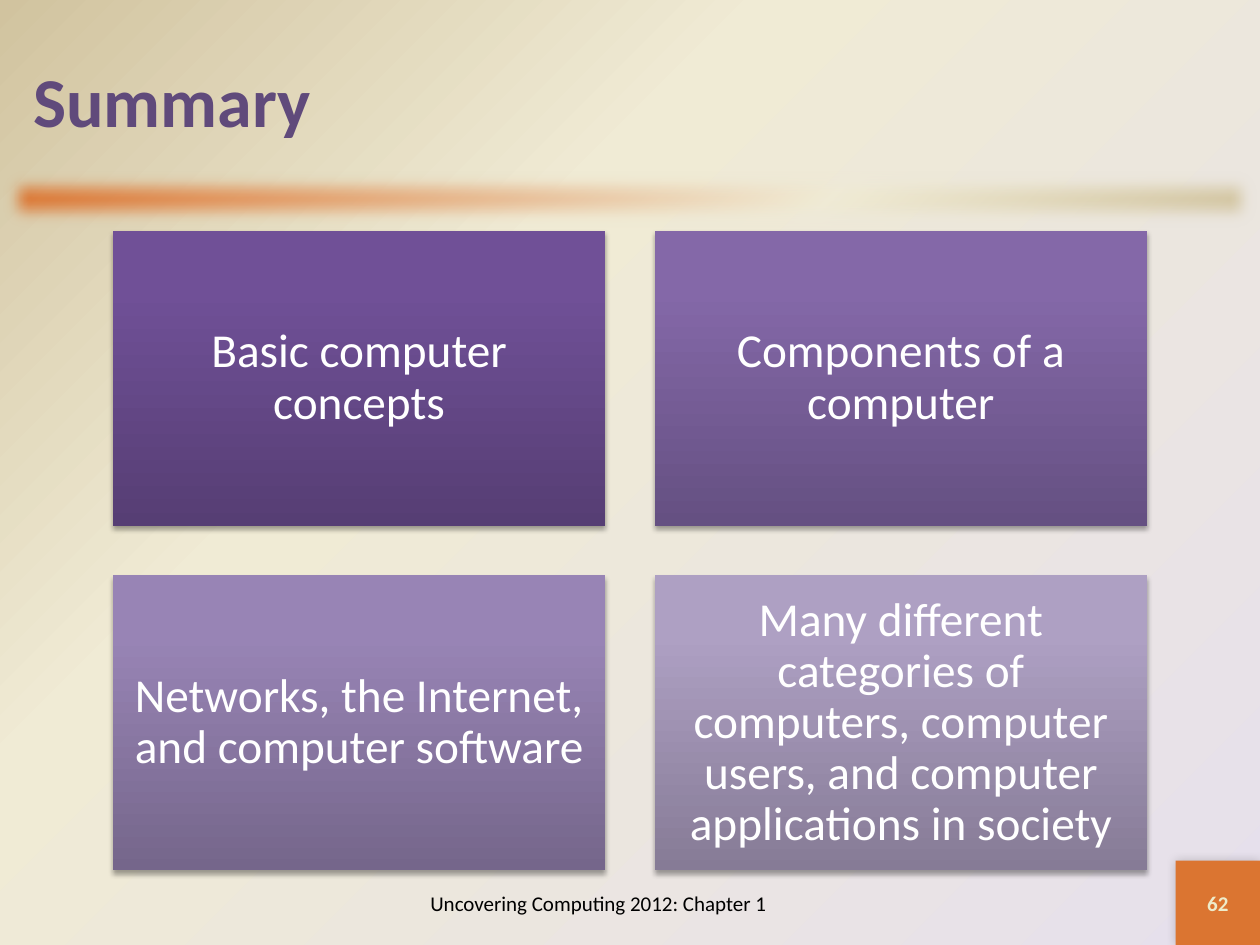
from dataclasses import dataclass

from lxml import etree
from pptx import Presentation
from pptx.dml.color import RGBColor
from pptx.enum.shapes import MSO_SHAPE
from pptx.enum.text import MSO_ANCHOR, PP_ALIGN
from pptx.oxml.ns import qn
from pptx.util import Cm, Pt

RECTANGLE = MSO_SHAPE.RECTANGLE
MIDDLE = MSO_ANCHOR.MIDDLE
LEFT, CENTER = PP_ALIGN.LEFT, PP_ALIGN.CENTER

FONT = "Calibri"
COLORS = {
    "title": "604A7B",
    "accent": "DB7531",
    "cream": "F0EBD5",
    "tan": "D1C39F",
    "lavender": "E6E0EC",
    "number": "EEEBCA",
    "white": "FFFFFF",
    "black": "000000",
}

SLIDE_W, SLIDE_H = 25.4, 19.05
TILE_W, TILE_H, TILE_GAP = 9.92, 5.95, 1.0
TILE_LEFT, TILE_TOP = 2.28, 4.65
COLUMNS = 2
NUMBER_SIZE = 1.7


@dataclass(frozen=True)
class Topic:
    text: str
    bottom: str
    middle: str
    top: str


@dataclass(frozen=True)
class Shadow:
    opacity: int
    blur: float
    distance: float
    angle: int


TOPICS = [
    Topic("Basic computer concepts", "563E74", "705097", "704F99"),
    Topic("Components of a computer", "655082", "8468A8", "8467AA"),
    Topic("Networks, the Internet, and computer software",
          "75668B", "9884B5", "9984B7"),
    Topic("Many different categories of computers, computer users, "
          "and computer applications in society",
          "867B96", "AEA0C3", "AEA0C5"),
]
TILE_SHADOW = Shadow(35, 3.1, 1.8, 90)
NUMBER_SHADOW = Shadow(20, 6, 0, 225)


def add_child(parent, tag: str, **attributes):
    child = etree.SubElement(parent, qn(tag))
    for key, value in attributes.items():
        child.set(key, str(value))
    return child


def set_gradient(fill, properties, stops: list, angle: int | None = None) -> None:
    """Fill with (percent, hex) stops; without an angle, radiate from bottom right."""
    fill.gradient()
    gradient = properties.find(qn("a:gradFill"))
    for child in list(gradient):
        gradient.remove(child)
    stop_list = add_child(gradient, "a:gsLst")
    for percent, color in stops:
        stop = add_child(stop_list, "a:gs", pos=percent * 1000)
        add_child(stop, "a:srgbClr", val=color)
    if angle is None:
        radial = add_child(gradient, "a:path", path="circle")
        add_child(radial, "a:fillToRect", l=100000, t=100000)
    else:
        add_child(gradient, "a:lin", ang=angle * 60000, scaled=0)


def add_rectangle(slide, left: float, top: float, width: float, height: float):
    shape = slide.shapes.add_shape(RECTANGLE, Cm(left), Cm(top), Cm(width), Cm(height))
    shape.shadow.inherit = False
    shape.line.fill.background()
    return shape


def add_shadow(shape, shadow: Shadow) -> None:
    effects = shape.element.spPr.find(qn("a:effectLst"))
    outer = add_child(effects, "a:outerShdw", blurRad=Pt(shadow.blur),
                      dist=Pt(shadow.distance), dir=shadow.angle * 60000,
                      rotWithShape=0)
    color = add_child(outer, "a:srgbClr", val=COLORS["black"])
    add_child(color, "a:alpha", val=shadow.opacity * 1000)


def write_text(shape, text: str, *, size: float, color: str, bold: bool = False,
               align=CENTER, line_spacing: float | None = None,
               inset: float | None = None) -> None:
    frame = shape.text_frame
    frame.word_wrap = True
    frame.vertical_anchor = MIDDLE
    if inset is not None:
        frame.margin_left = frame.margin_right = Cm(inset)
        frame.margin_top = frame.margin_bottom = Cm(inset)
    paragraph = frame.paragraphs[0]
    paragraph.alignment = align
    if line_spacing is not None:
        paragraph.line_spacing = line_spacing
    run = paragraph.add_run()
    run.text = text
    run.font.name = FONT
    run.font.size = Pt(size)
    run.font.bold = bold
    run.font.color.rgb = RGBColor.from_string(COLORS[color])


def add_topic(slide, topic: Topic, index: int) -> None:
    row, column = divmod(index, COLUMNS)
    tile = add_rectangle(slide, TILE_LEFT + column * (TILE_W + TILE_GAP),
                         TILE_TOP + row * (TILE_H + TILE_GAP), TILE_W, TILE_H)
    set_gradient(tile.fill, tile.element.spPr,
                 [(0, topic.bottom), (80, topic.middle), (100, topic.top)], 270)
    add_shadow(tile, TILE_SHADOW)
    write_text(tile, topic.text, size=27, color="white", line_spacing=0.9, inset=0.28)


def main() -> None:
    presentation = Presentation()
    presentation.slide_width, presentation.slide_height = Cm(SLIDE_W), Cm(SLIDE_H)
    slide = presentation.slides.add_slide(presentation.slide_layouts[6])

    warm_stops = [(65, COLORS["cream"]), (100, COLORS["tan"])]
    background_fill = slide.background.fill
    background_fill.solid()
    background = slide.element.find(".//" + qn("p:bgPr"))
    set_gradient(background_fill, background, [(0, COLORS["lavender"])] + warm_stops)

    divider = add_rectangle(slide, 0, 3.38, SLIDE_W, 1.27)
    set_gradient(divider.fill, divider.element.spPr,
                 [(0, COLORS["accent"])] + warm_stops, 45)
    add_child(divider.element.spPr.find(qn("a:effectLst")), "a:softEdge", rad=Pt(10))

    number = add_rectangle(slide, SLIDE_W - NUMBER_SIZE, SLIDE_H - NUMBER_SIZE,
                           NUMBER_SIZE, NUMBER_SIZE)
    number.fill.solid()
    number.fill.fore_color.rgb = RGBColor.from_string(COLORS["accent"])
    add_shadow(number, NUMBER_SHADOW)
    write_text(number, "62", size=12, color="number", bold=True)

    title = slide.shapes.add_textbox(Cm(0.42), Cm(0.42), Cm(24.56), Cm(3.18))
    write_text(title, "Summary", size=40, color="title", bold=True, align=LEFT)

    footer = slide.shapes.add_textbox(Cm(5.5), Cm(17.7), Cm(13.13), Cm(1.02))
    write_text(footer, "Uncovering Computing 2012: Chapter 1", size=12, color="black")

    for index, topic in enumerate(TOPICS):
        add_topic(slide, topic, index)

    presentation.save("out.pptx")


if __name__ == "__main__":
    main()
